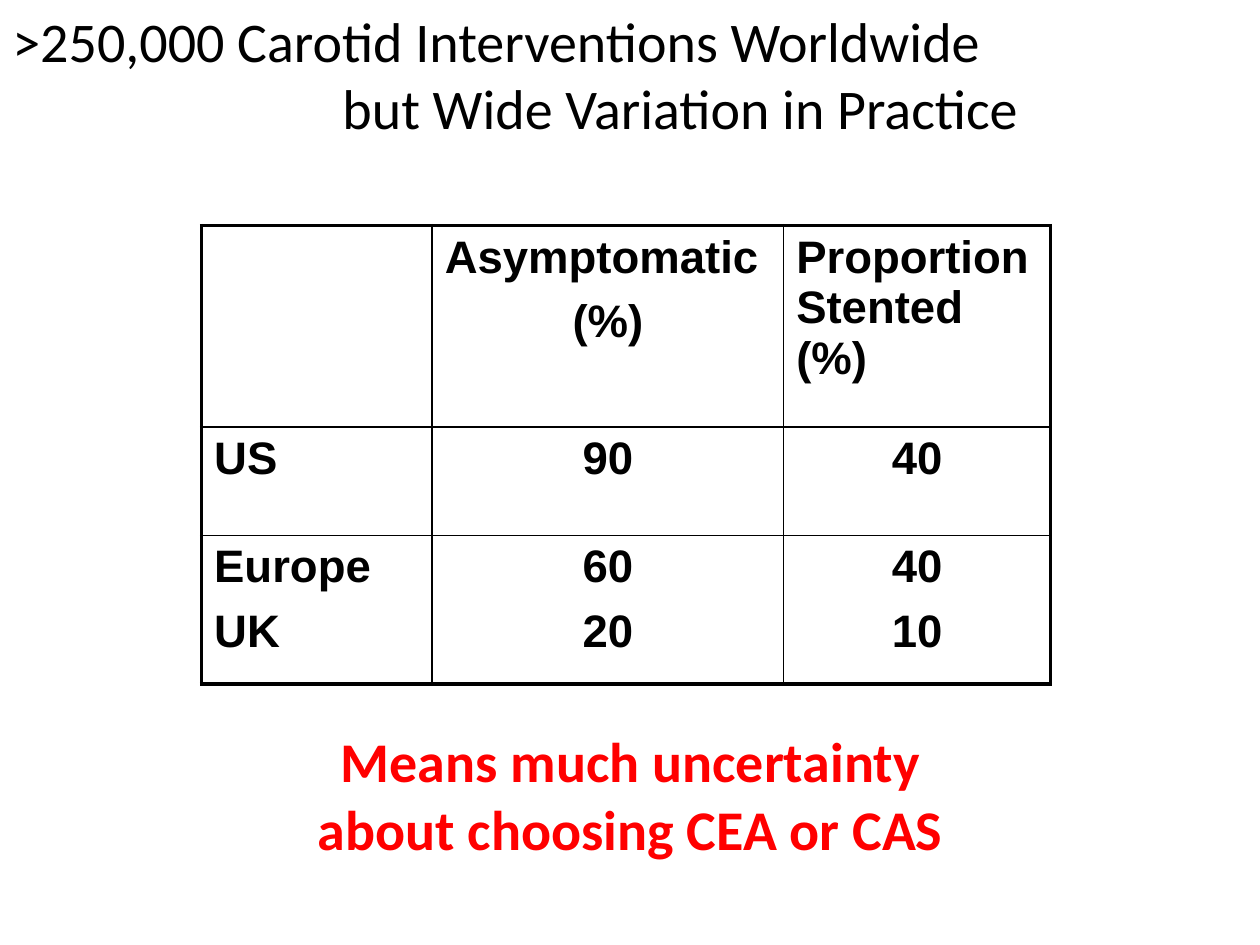
from lxml.etree import SubElement
from pptx import Presentation
from pptx.dml.color import RGBColor
from pptx.enum.text import MSO_AUTO_SIZE as AutoSize, PP_ALIGN as Align
from pptx.oxml.ns import qn
from pptx.util import Inches, Pt

BLACK = RGBColor(0, 0, 0)
RED = RGBColor(255, 0, 0)
THIN, THICK = Pt(1), Pt(2.25)


class SlideBuilder:
    heading_font, table_font = "Calibri", "Arial"
    heading_size, table_size = Pt(32), Pt(26)

    def __init__(self, slide):
        self.slide = slide

    def add_lines(self, frame, lines, font, size, color, bold, align, gap=0):
        for index, line in enumerate(lines):
            para = frame.add_paragraph() if index else frame.paragraphs[0]
            para.alignment = align
            if index:
                para.space_before = Pt(gap)
            span = para.add_run()
            span.text = line
            span.font.name, span.font.size = font, size
            span.font.bold, span.font.color.rgb = bold, color

    def text(self, left, top, width, height, lines, color=BLACK, bold=False,
             align=Align.LEFT):
        box = self.slide.shapes.add_textbox(*map(Inches, (left, top, width, height)))
        frame = box.text_frame
        frame.word_wrap = True
        frame.auto_size = AutoSize.SHAPE_TO_FIT_TEXT
        self.add_lines(frame, lines, self.heading_font, self.heading_size, color,
                       bold, align)
        return frame

    def border(self, cell, widths):
        properties = cell._tc.get_or_add_tcPr()
        for index, (side, width) in enumerate(zip("LRTB", widths)):
            line = SubElement(properties, qn(f"a:ln{side}"), w=str(width))
            fill = SubElement(line, qn("a:solidFill"))
            SubElement(fill, qn("a:srgbClr"), val=str(BLACK))
            properties.insert(index, line)

    def table(self, left, top, widths, heights, rows):
        last_row, last_col = len(heights) - 1, len(widths) - 1
        grid = self.slide.shapes.add_table(
            len(heights), len(widths), Inches(left), Inches(top),
            Inches(sum(widths)), Inches(sum(heights))).table
        grid.first_row = grid.horz_banding = False
        for column, width in zip(grid.columns, widths):
            column.width = Inches(width)
        for row, height in zip(grid.rows, heights):
            row.height = Inches(height)
        for r, row in enumerate(rows):
            for c, (lines, align) in enumerate(row):
                cell = grid.cell(r, c)
                cell.fill.background()
                # Thick frame outside, thin rules inside
                edges = (c == 0, c == last_col, r == 0, r == last_row)
                self.border(cell, [THICK if edge else THIN for edge in edges])
                self.add_lines(cell.text_frame, lines, self.table_font,
                               self.table_size, BLACK, True, align, gap=7.8)
        return grid


def main():
    deck = Presentation()
    deck.slide_width, deck.slide_height = Inches(10), Inches(7.5)
    page = SlideBuilder(deck.slides.add_slide(deck.slide_layouts[6]))

    # Table of practice by region
    left, center = Align.LEFT, Align.CENTER
    rows = [
        [([], left), (["Asymptomatic", "(%)"], center),
         (["Proportion Stented (%)"], left)],
        [(["US"], left), (["90"], center), (["40"], center)],
        [(["Europe", "UK"], left), (["60", "20"], center), (["40", "10"], center)],
    ]
    grid = page.table(1.6, 1.79, [1.83, 2.79, 2.12], [1.6, 0.86, 1.18], rows)
    grid.cell(0, 1).text_frame.paragraphs[0].alignment = left

    # Title, second line indented
    title = page.text(0, 0, 10, 1.17, [">250,000 Carotid Interventions Worldwide",
                                       "but Wide Variation in Practice"])
    indent = Inches(2.62)
    title.paragraphs[1]._p.get_or_add_pPr().set("marL", str(indent))

    # Conclusion
    page.text(2.4, 5.72, 5.21, 1.18,
              ["Means much uncertainty", "about choosing CEA or CAS"],
              RED, True, center)

    deck.save("out.pptx")


if __name__ == "__main__":
    main()
